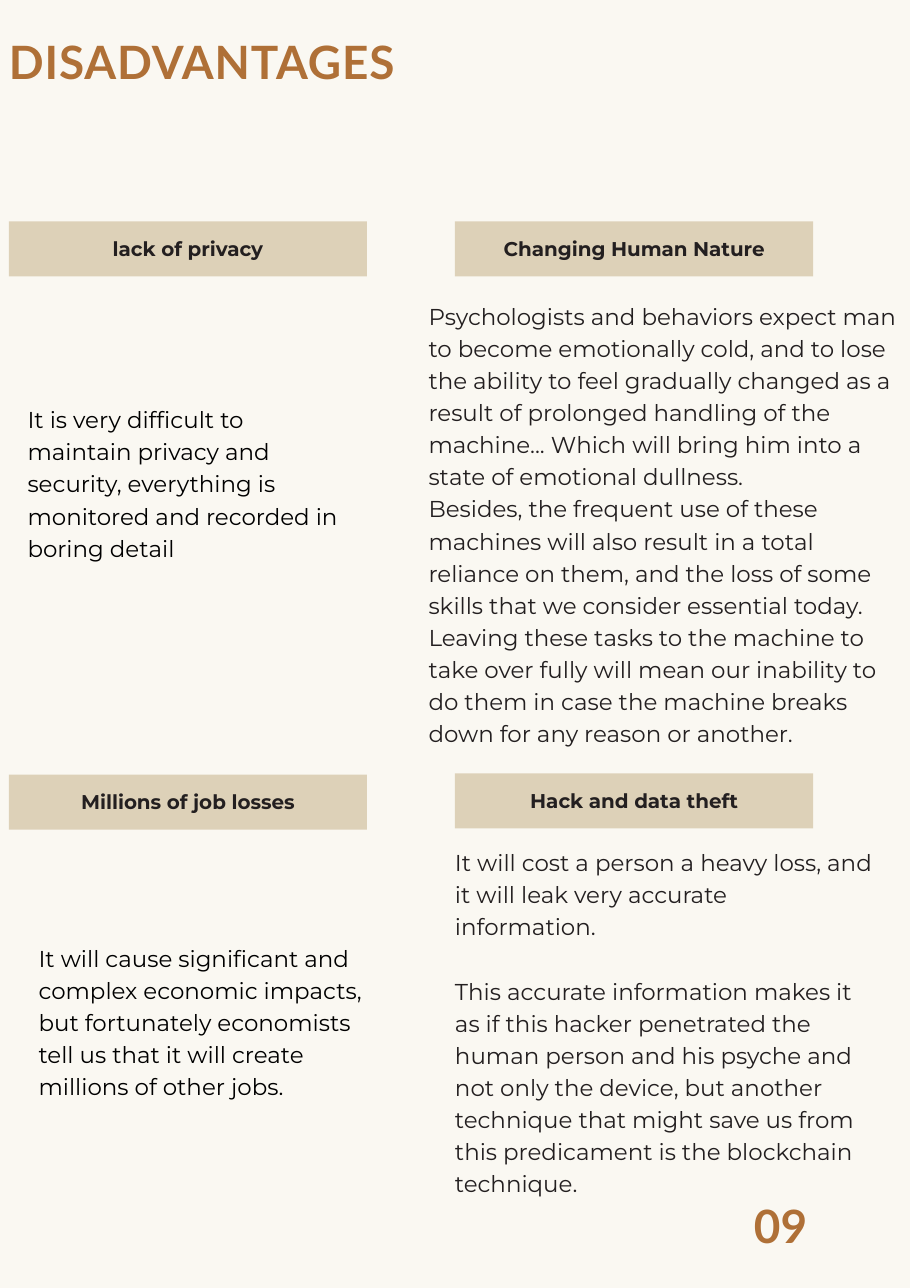
from dataclasses import dataclass

from pptx import Presentation
from pptx import util as u
from pptx.dml.color import RGBColor
from pptx.enum import shapes, text

COLORS = {
    "paper": "FAF8F2",
    "accent": "AF7037",
    "band": "DDD1B8",
    "ink": "231F20",
    "black": "000000",
}
BAND_WIDTH, BAND_HEIGHT = 3.25, 0.5
LEFT_COLUMN, RIGHT_COLUMN = 0.08, 4.13


@dataclass
class Topic:
    heading: str
    band_left: float
    band_top: float
    body: list[str]
    body_box: tuple[float, float, float, float]
    color: str = "ink"
    gap: float = 0


TOPICS = [
    Topic(
        "Changing Human Nature", RIGHT_COLUMN, 2.01,
        ["Psychologists and behaviors expect man to become emotionally cold, "
         "and to lose the ability to feel gradually changed as a result of "
         "prolonged handling of the machine... Which will bring him into a "
         "state of emotional dullness.",
         "Besides, the frequent use of these machines will also result in a "
         "total reliance on them, and the loss of some skills that we "
         "consider essential today.",
         "Leaving these tasks to the machine to take over fully will mean our "
         "inability to do them in case the machine breaks down for any reason "
         "or another."],
        (3.89, 2.7, 4.27, 4.08),
    ),
    Topic(
        "Hack and data theft", RIGHT_COLUMN, 7.02,
        ["It will cost a person a heavy loss, and it will leak very accurate "
         "information.",
         "This accurate information makes it as if this hacker penetrated the "
         "human person and his psyche and not only the device, but another "
         "technique that might save us from this predicament is the "
         "blockchain technique."],
        (RIGHT_COLUMN, 7.66, 3.79, 3.21), gap=21,
    ),
    Topic(
        "lack of privacy", LEFT_COLUMN, 2.01,
        ["It is very difficult to maintain privacy and security, everything "
         "is monitored and recorded in boring detail"],
        (0.25, 3.64, 2.92, 1.46), "black",
    ),
    Topic(
        "Millions of job losses", LEFT_COLUMN, 7.03,
        ["It will cause significant and complex economic impacts, but "
         "fortunately economists tell us that it will create millions of "
         "other jobs."],
        (0.35, 8.53, 2.98, 1.46), "black",
    ),
]


def rgb(name: str) -> RGBColor:
    return RGBColor.from_string(COLORS[name])


def write(tf, paragraphs: list[str], *, size: float, leading: float,
          font: str = "Montserrat", color: str = "ink", bold: bool = False,
          align=text.PP_ALIGN.LEFT, gap: float = 0, tracking: float = 0,
          insets: tuple[float, float, float, float] = (0, 0, 0, 0)) -> None:
    """Fill a text frame; sizes in points, insets (l, t, r, b) in inches."""
    tf.word_wrap = True
    (tf.margin_left, tf.margin_top,
     tf.margin_right, tf.margin_bottom) = map(u.Inches, insets)
    for i, words in enumerate(paragraphs):
        p = tf.add_paragraph() if i else tf.paragraphs[0]
        p.alignment = align
        p.line_spacing = u.Pt(leading)
        if i and gap:
            p.space_before = u.Pt(gap)
        r = p.add_run()
        r.text = words
        r.font.name, r.font.size, r.font.bold = font, u.Pt(size), bold
        r.font.color.rgb = rgb(color)
        if tracking:
            r.font._element.set("spc", str(round(tracking * 100)))


def add_text(s, box: tuple[float, float, float, float],
             paragraphs: list[str], **style) -> None:
    sp = s.shapes.add_textbox(*map(u.Inches, box))
    write(sp.text_frame, paragraphs, **style)
    sp.text_frame.auto_size = text.MSO_AUTO_SIZE.SHAPE_TO_FIT_TEXT


def add_band(s, topic: Topic) -> None:
    box = (topic.band_left, topic.band_top, BAND_WIDTH, BAND_HEIGHT)
    sp = s.shapes.add_shape(shapes.MSO_SHAPE.RECTANGLE, *map(u.Inches, box))
    sp.shadow.inherit = False
    sp.fill.solid()
    sp.fill.fore_color.rgb = rgb("band")
    sp.line.fill.background()
    sp.text_frame.vertical_anchor = text.MSO_ANCHOR.MIDDLE
    write(sp.text_frame, [topic.heading], size=13, leading=18.2, bold=True,
          align=text.PP_ALIGN.CENTER, insets=(0.02, 0.02, 0.02, 0.07))


def main() -> None:
    prs = Presentation()
    prs.slide_width, prs.slide_height = u.Inches(8.26), u.Inches(11.69)
    s = prs.slides.add_slide(prs.slide_layouts[6])
    s.background.fill.solid()
    s.background.fill.fore_color.rgb = rgb("paper")

    display = dict(size=30, leading=35.4, font="Lato", color="accent", bold=True)
    add_text(s, (LEFT_COLUMN, 0.31, 3.57, 0.52), ["DISADVANTAGES"],
             tracking=0.6, **display)
    for topic in TOPICS:
        add_band(s, topic)
        add_text(s, topic.body_box, topic.body, size=15, leading=21,
                 color=topic.color, gap=topic.gap)
    add_text(s, (6.73, 10.88, 0.71, 0.52), ["09"],
             align=text.PP_ALIGN.CENTER, **display)
    prs.save("out.pptx")


if __name__ == "__main__":
    main()
